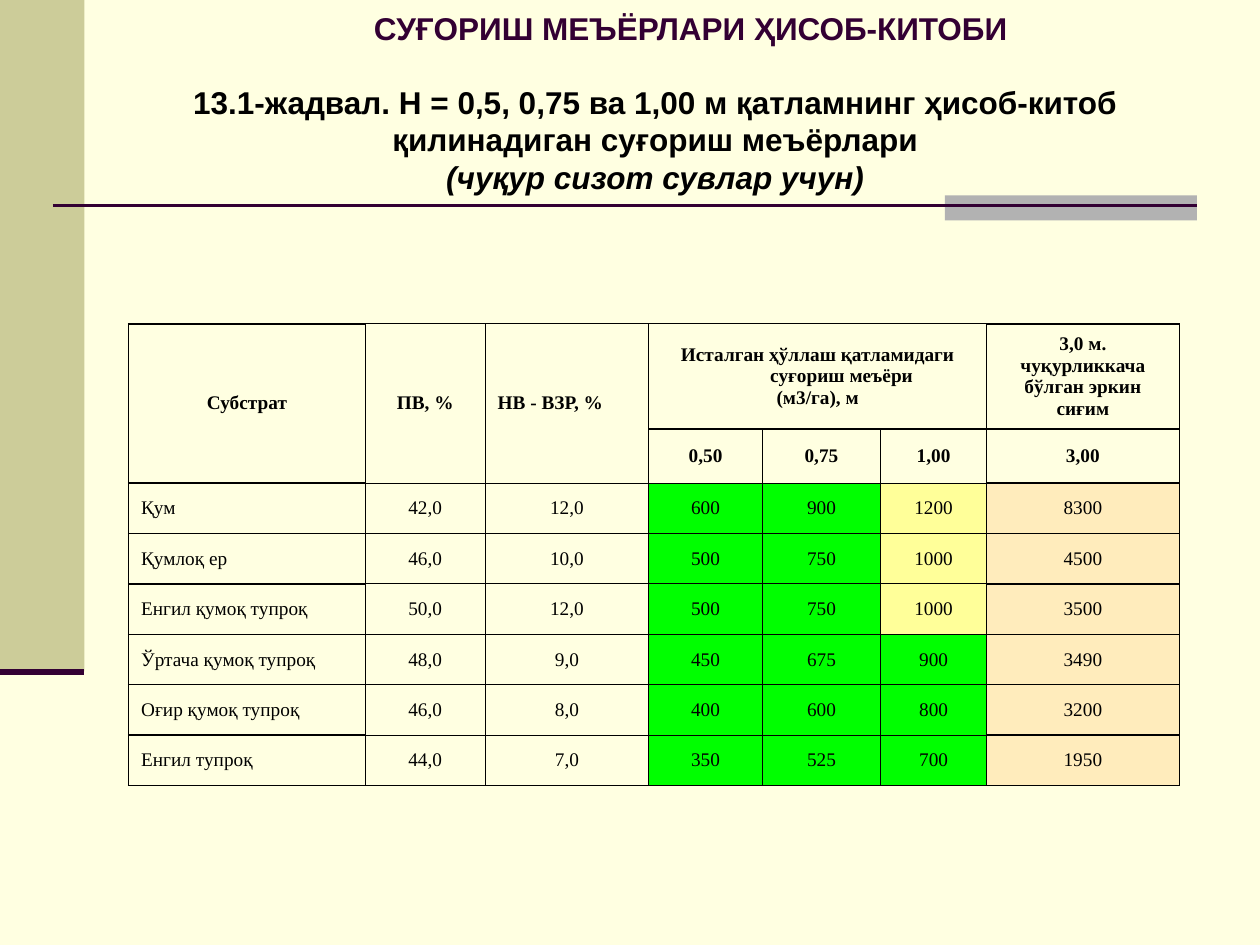
"""Build the slide with the table of calculated irrigation norms."""
from lxml import etree
from pptx import Presentation
from pptx.dml.color import RGBColor
from pptx.enum.shapes import MSO_CONNECTOR, MSO_SHAPE
from pptx.enum.text import MSO_ANCHOR, PP_ALIGN
from pptx.oxml.ns import qn
from pptx.util import Inches, Pt

RECTANGLE = MSO_SHAPE.RECTANGLE
STRAIGHT = MSO_CONNECTOR.STRAIGHT
MIDDLE = MSO_ANCHOR.MIDDLE
LEFT, CENTER = PP_ALIGN.LEFT, PP_ALIGN.CENTER

CREAM = RGBColor(0xFF, 0xFF, 0xE1)
OLIVE = RGBColor(0xCC, 0xCC, 0x99)
GRAY = RGBColor(0xB2, 0xB2, 0xB2)
PLUM = RGBColor(0x33, 0x00, 0x33)
BLACK = RGBColor(0x00, 0x00, 0x00)
GREEN = RGBColor(0x00, 0xFF, 0x00)
YELLOW = RGBColor(0xFF, 0xFF, 0x99)
PEACH = RGBColor(0xFF, 0xEC, 0xBC)

TITLE = "СУҒОРИШ МЕЪЁРЛАРИ ҲИСОБ-КИТОБИ"
CAPTION = "13.1-жадвал. Н = 0,5, 0,75 ва 1,00 м қатламнинг ҳисоб-китоб қилинадиган суғориш меъёрлари"
CAPTION_NOTE = "(чуқур сизот сувлар учун)"

NORM_HEADING = "Исталган ҳўллаш қатламидаги суғориш меъёри"
NORM_UNIT = "(м3/га), м"
CAPACITY_HEADING = "3,0 м. чуқурликкача бўлган эркин сиғим"
FLUSH_TEXTS = (NORM_UNIT, CAPACITY_HEADING)
LEFT_HEADING = "НВ - ВЗР, %"
ROWS = [
    ["Субстрат", "ПВ, %", LEFT_HEADING, f"{NORM_HEADING}\n{NORM_UNIT}", "", "", CAPACITY_HEADING],
    ["", "", "", "0,50", "0,75", "1,00", "3,00"],
    ["Қум", "42,0", "12,0", "600", "900", "1200", "8300"],
    ["Қумлоқ ер", "46,0", "10,0", "500", "750", "1000", "4500"],
    ["Енгил қумоқ тупроқ", "50,0", "12,0", "500", "750", "1000", "3500"],
    ["Ўртача қумоқ тупроқ", "48,0", "9,0", "450", "675", "900", "3490"],
    ["Оғир қумоқ тупроқ", "46,0", "8,0", "400", "600", "800", "3200"],
    ["Енгил тупроқ", "44,0", "7,0", "350", "525", "700", "1950"],
]
HEADER_ROWS = 2
MERGES = [((0, 0), (1, 0)), ((0, 1), (1, 1)), ((0, 2), (1, 2)), ((0, 3), (0, 5))]
COLUMN_WIDTHS = [1.88, 0.95, 1.3, 0.9, 0.94, 0.84, 1.53]
ROW_HEIGHTS = [0.8, 0.43] + [0.4] * 6
NORM_COLUMNS = (3, 4, 5)
CAPACITY_COLUMN = 6
HANGING = 0.38

BLOCKS = [((0, 0, 0.67, 5.33), OLIVE), ((7.5, 1.55, 2, 0.2), GRAY)]
RULES = [((0.42, 1.63, 9.5, 1.63), 1.5), ((0, 5.33, 0.67, 5.33), 3.5)]


def set_font(paragraph, name, size, color, bold):
    font = paragraph.font
    font.name, font.size, font.bold = name, Pt(size), bold
    font.color.rgb = color


def add_block(slide, box, color):
    shape = slide.shapes.add_shape(RECTANGLE, *map(Inches, box))
    shape.shadow.inherit = False
    shape.fill.solid()
    shape.fill.fore_color.rgb = color
    shape.line.fill.background()


def add_rule(slide, ends, width):
    connector = slide.shapes.add_connector(STRAIGHT, *map(Inches, ends))
    connector.line.color.rgb = PLUM
    connector.line.width = Pt(width)
    etree.SubElement(connector.element.spPr, qn("a:effectLst"))


def add_heading(slide, box, text, color, alignment):
    frame = slide.shapes.add_textbox(*map(Inches, box)).text_frame
    frame.word_wrap = True
    frame.vertical_anchor = MIDDLE
    paragraph = frame.paragraphs[0]
    paragraph.alignment = alignment
    set_font(paragraph, "Arial", 18, color, True)
    paragraph.add_run().text = text
    return paragraph


def cell_color(row, column):
    if row < HEADER_ROWS:
        return None
    if column == CAPACITY_COLUMN:
        return PEACH
    if column in NORM_COLUMNS:
        return GREEN if int(ROWS[row][column]) < 1000 else YELLOW
    return None


def set_borders(cell, column):
    properties = cell._tc.get_or_add_tcPr()
    thick_sides = {0: "LRTB", 1: "L", 5: "R", CAPACITY_COLUMN: "LRTB"}.get(column, "")
    for position, side in enumerate("LRTB"):
        width = Pt(1 if side in thick_sides else 0.75)
        line = etree.Element(qn(f"a:ln{side}"), w=str(width))
        fill = etree.SubElement(line, qn("a:solidFill"))
        etree.SubElement(fill, qn("a:srgbClr"), val=str(BLACK))
        properties.insert(position, line)


def fill_cell(cell, row, column):
    text = ROWS[row][column]
    cell.text = text
    cell.vertical_anchor = MIDDLE
    color = cell_color(row, column)
    if color is None:
        cell.fill.background()
    else:
        cell.fill.solid()
        cell.fill.fore_color.rgb = color
    is_header = row < HEADER_ROWS
    is_left = text == LEFT_HEADING or (column == 0 and not is_header)
    for paragraph in cell.text_frame.paragraphs:
        paragraph.alignment = LEFT if is_left else CENTER
        set_font(paragraph, "Times New Roman", 11, BLACK, is_header)
        if paragraph.text not in FLUSH_TEXTS:
            properties = paragraph._p.get_or_add_pPr()
            properties.set("marL", str(Inches(HANGING)))
            properties.set("indent", str(-Inches(HANGING)))
    set_borders(cell, column)


def add_norm_table(slide):
    box = (1.02, 2.57, sum(COLUMN_WIDTHS), sum(ROW_HEIGHTS))
    frame = slide.shapes.add_table(len(ROWS), len(COLUMN_WIDTHS), *map(Inches, box))
    table = frame.table
    table.first_row = table.horz_banding = False
    for column, width in zip(table.columns, COLUMN_WIDTHS):
        column.width = Inches(width)
    for row, height in zip(table.rows, ROW_HEIGHTS):
        row.height = Inches(height)
    for row, values in enumerate(ROWS):
        for column in range(len(values)):
            fill_cell(table.cell(row, column), row, column)
    for first, last in MERGES:
        table.cell(*first).merge(table.cell(*last))


def main():
    presentation = Presentation()
    presentation.slide_width, presentation.slide_height = Inches(10), Inches(7.5)
    slide = presentation.slides.add_slide(presentation.slide_layouts[6])
    slide.background.fill.solid()
    slide.background.fill.fore_color.rgb = CREAM
    for box, color in BLOCKS:
        add_block(slide, box, color)
    for ends, width in RULES:
        add_rule(slide, ends, width)
    add_heading(slide, (2.87, 0, 6.56, 0.44), TITLE, PLUM, LEFT)
    add_norm_table(slide)
    caption = add_heading(slide, (0.83, 0.6, 8.74, 1.01), CAPTION, BLACK, CENTER)
    caption.add_line_break()
    note = caption.add_run()
    note.text = CAPTION_NOTE
    note.font.italic = True
    presentation.save("out.pptx")


if __name__ == "__main__":
    main()
